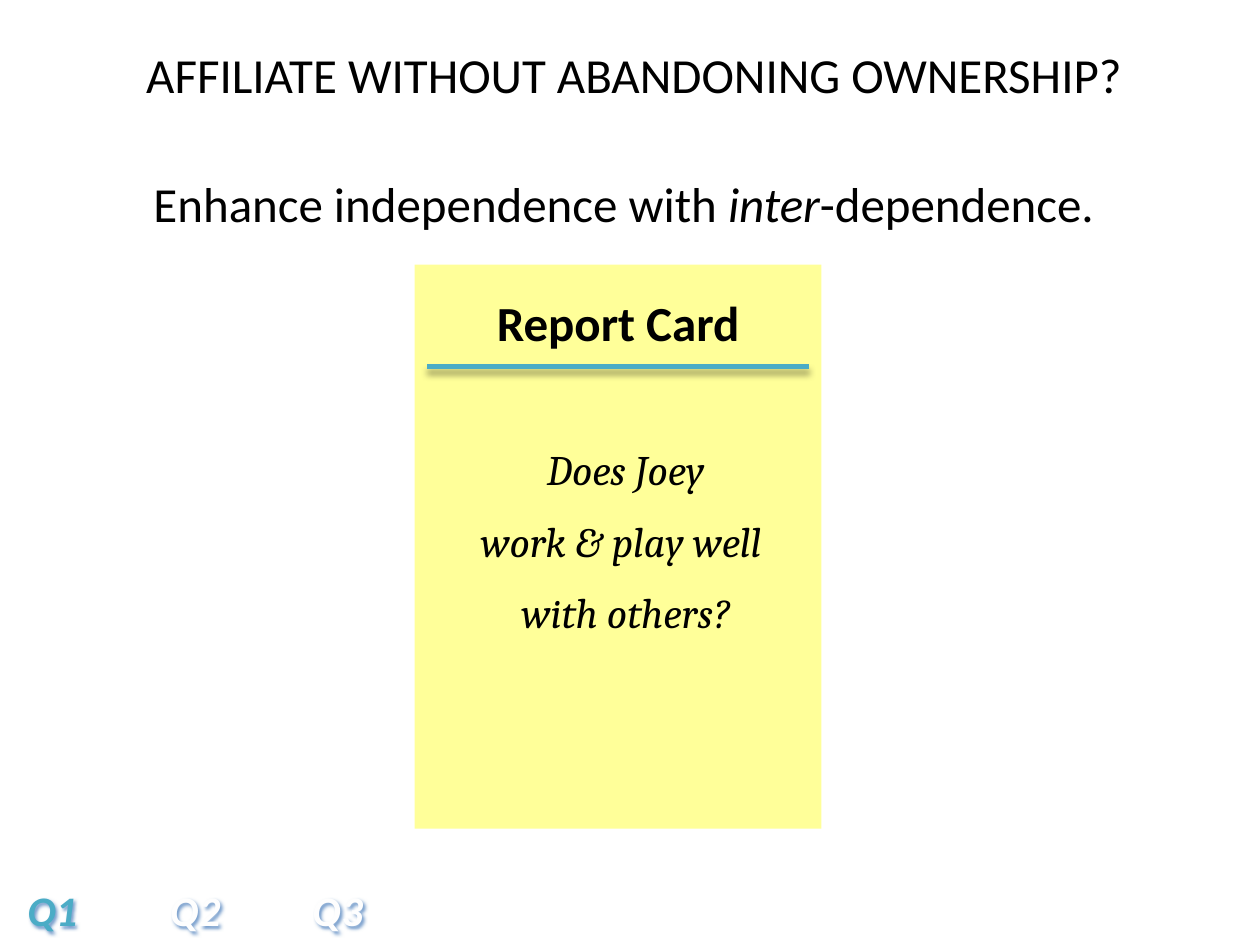
from dataclasses import dataclass

import lxml.etree
import pptx
import pptx.dml.color
import pptx.enum.shapes
import pptx.enum.text
import pptx.oxml.ns
import pptx.util

COLORS = {"ink": "000000", "card": "FFFF99", "accent": "4BACC6",
          "white": "FFFFFF", "faded": "FEFEFE", "edge": "4F81BD"}
WIDTH, HEIGHT = 10, 7.5
CENTER = pptx.enum.text.PP_ALIGN.CENTER
LEFT = pptx.enum.text.PP_ALIGN.LEFT
TAB_STEP = 1.13


@dataclass(frozen=True)
class PercentArea:
    left: float
    top: float
    width: float
    height: float

    def place(self) -> tuple:
        return tuple(pptx.util.Inches(share * side / 100) for share, side in
                     [(self.left, WIDTH), (self.top, HEIGHT),
                      (self.width, WIDTH), (self.height, HEIGHT)])


@dataclass(frozen=True)
class Quarter:
    label: str
    color: str
    outline: str


QUARTERS = [Quarter("Q1", "accent", "white"),
            Quarter("\tQ2", "faded", "edge"),
            Quarter("\tQ3", "faded", "edge")]
QUESTION = ["Does Joey", "work & play well ", "with others?"]


def rgb(name: str) -> pptx.dml.color.RGBColor:
    return pptx.dml.color.RGBColor.from_string(COLORS[name])


def element(parent, tag: str, index: int | None = None, **attributes):
    child = lxml.etree.Element(pptx.oxml.ns.qn(tag), attributes)
    parent.insert(len(parent) if index is None else index, child)
    return child


def add_shadow(shape, color: str, alpha: int, blur: float, distance: float,
               angle: int) -> None:
    effects = element(shape._element.spPr, "a:effectLst")
    shadow = element(effects, "a:outerShdw", blurRad=str(pptx.util.Pt(blur)),
                     dist=str(pptx.util.Pt(distance)), dir=str(angle * 60000),
                     rotWithShape="0")
    tone = element(shadow, "a:srgbClr", val=COLORS[color])
    element(tone, "a:alpha", val=str(alpha * 1000))


def write(paragraph, text: str, size: float = 28, font: str = "Calibri", color: str = "ink",
          bold: bool = False, italic: bool = False, align=CENTER, before: float = 0):
    paragraph.alignment = align
    paragraph.space_before = pptx.util.Pt(before)
    run = paragraph.add_run()
    run.text = text
    run.font.size = pptx.util.Pt(size)
    run.font.name = font
    run.font.bold = bold
    run.font.italic = italic
    run.font.color.rgb = rgb(color)
    return run


def add_text_box(slide, area: PercentArea):
    box = slide.shapes.add_textbox(*area.place())
    box.text_frame.word_wrap = True
    box.text_frame.auto_size = pptx.enum.text.MSO_AUTO_SIZE.SHAPE_TO_FIT_TEXT
    return box


def remove_bullet(paragraph, indent: float) -> None:
    properties = paragraph._p.get_or_add_pPr()
    properties.set("marL", str(pptx.util.Inches(indent)))
    properties.set("indent", "0")
    element(properties, "a:buNone")


def add_card(slide, area: PercentArea) -> None:
    card = slide.placeholders[1]
    card.left, card.top, card.width, card.height = area.place()
    card.fill.solid()
    card.fill.fore_color.rgb = rgb("card")
    frame = card.text_frame
    frame.auto_size = pptx.enum.text.MSO_AUTO_SIZE.NONE
    frame.margin_top = pptx.util.Inches(0.22)
    heading = frame.paragraphs[0]
    write(heading, "Report Card", bold=True)
    remove_bullet(heading, 0)
    for row, line in enumerate(QUESTION):
        paragraph = frame.add_paragraph()
        paragraph.level = 1
        write(paragraph, line, size=24, font="Cambria", italic=True,
              before=12 if row else 53)
        remove_bullet(paragraph, 0.12)


def add_rule(slide, area: PercentArea) -> None:
    left, top, width, height = area.place()
    rule = slide.shapes.add_connector(pptx.enum.shapes.MSO_CONNECTOR.STRAIGHT,
                                      left, top, left + width, top + height)
    rule.line.color.rgb = rgb("accent")
    rule.line.width = pptx.util.Pt(3)
    add_shadow(rule, "ink", alpha=40, blur=4, distance=3, angle=90)


def add_quarters(slide, area: PercentArea) -> None:
    box = add_text_box(slide, area)
    add_shadow(box, "edge", alpha=80, blur=2, distance=1.5, angle=45)
    paragraph = box.text_frame.paragraphs[0]
    for quarter in QUARTERS:
        run = write(paragraph, quarter.label, size=24, color=quarter.color,
                    bold=True, italic=True, align=LEFT)
        properties = run.font._element
        outline = element(properties, "a:ln", 0, w=str(pptx.util.Pt(0.75)))
        element(element(outline, "a:solidFill"), "a:srgbClr", val=COLORS[quarter.outline])
        if quarter.color == "faded":
            properties.set("spc", "50")
    stops = element(paragraph._p.get_or_add_pPr(), "a:tabLst")
    for column in range(1, len(QUARTERS)):
        element(stops, "a:tab", pos=str(pptx.util.Inches(column * TAB_STEP)), algn="l")


def main() -> None:
    deck = pptx.Presentation()
    deck.slide_width = pptx.util.Inches(WIDTH)
    deck.slide_height = pptx.util.Inches(HEIGHT)
    slide = deck.slides.add_slide(deck.slide_layouts[1])

    add_card(slide, PercentArea(32.9, 28, 32.3, 59.7))
    add_rule(slide, PercentArea(33.9, 38.8, 30.3, 0))

    title = slide.shapes.title
    title.left, title.top, title.width, title.height = PercentArea(4.5, 17.7, 90, 7.6).place()
    title.text_frame.auto_size = pptx.enum.text.MSO_AUTO_SIZE.SHAPE_TO_FIT_TEXT
    for text, italic in [("Enhance independence with ", False), ("inter", True),
                         ("-dependence.", False)]:
        write(title.text_frame.paragraphs[0], text, italic=italic)

    headline = add_text_box(slide, PercentArea(5.3, 4.1, 90, 7.6))
    write(headline.text_frame.paragraphs[0], "AFFILIATE WITHOUT ABANDONING OWNERSHIP?")
    add_quarters(slide, PercentArea(1.2, 92.9, 64.6, 6.7))
    deck.save("out.pptx")


if __name__ == "__main__":
    main()
